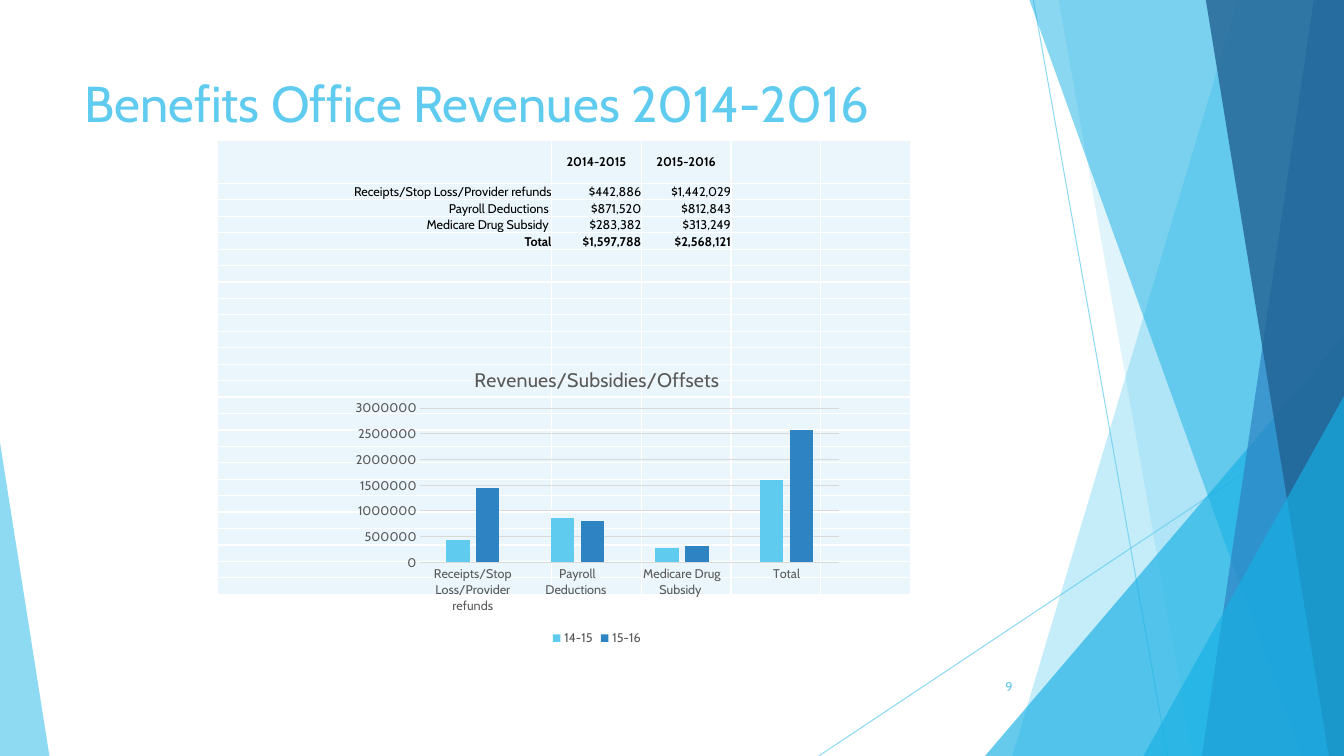
from lxml.etree import SubElement
from pptx import Presentation
from pptx.chart.data import CategoryChartData
from pptx.dml.color import RGBColor
from pptx.enum.chart import XL_CHART_TYPE, XL_LEGEND_POSITION, XL_TICK_MARK
from pptx.enum.shapes import MSO_CONNECTOR, MSO_SHAPE
from pptx.enum.text import MSO_ANCHOR, PP_ALIGN
from pptx.oxml.ns import qn
from pptx.util import Inches, Pt

FONT = "Cabin"
SKY = RGBColor(0x5F, 0xCB, 0xEF)
CYAN = RGBColor(0x17, 0xB0, 0xE4)
BLUE = RGBColor(0x2E, 0x83, 0xC3)
NAVY = RGBColor(0x22, 0x62, 0x92)
PALE = RGBColor(0xEA, 0xF6, 0xFC)
GRAY = RGBColor(0x59, 0x59, 0x59)
RULE = RGBColor(0xD9, 0xD9, 0xD9)
BLACK = RGBColor(0, 0, 0)

WIDE, HIGH = 13.33, 7.5
WEDGES = [
    ([(12.28, 0), (WIDE, 0), (WIDE, HIGH), (10.04, HIGH)], SKY, 36),
    ([(10.5, 0), (WIDE, 0), (WIDE, HIGH), (11.83, HIGH)], SKY, 20),
    ((9.77, 3.33, 3.56, 4.17, 1), CYAN, 66),
    ([(10.21, 0), (WIDE, 0), (WIDE, HIGH), (12.91, HIGH)], CYAN, 50),
    ([(13.03, 0), (WIDE, 0), (WIDE, HIGH), (11.92, HIGH)], BLUE, 70),
    ([(11.96, 0), (WIDE, 0), (WIDE, HIGH), (13.18, HIGH)], NAVY, 80),
    ((11.34, 3.93, 1.99, 3.57, 1), CYAN, 66),
    ((0, 4.39, 0.49, 3.11, 0), SKY, 70),
]
NAMES = ["Receipts/Stop Loss/Provider refunds", "Payroll Deductions ",
         "Medicare Drug Subsidy ", "Total"]
SUMS = [("$442,886", "$1,442,029"), ("$871,520", "$812,843"),
        ("$283,382", "$313,249"), ("$1,597,788", "$2,568,121")]
HEADS = ("", "2014-2015", "2015-2016")
SERIES = [("14-15", (440000, 870000, 280000, 1600000), SKY),
          ("15-16", (1440000, 810000, 310000, 2570000), BLUE)]
COLS = [3.31] + [0.89] * 4
ROWS = [0.43] + [(4.51 - 0.43) / 25] * 25


def style(font, size, color, bold=False):
    font.name, font.size, font.bold = FONT, Pt(size), bold
    font.color.rgb = color


def fade(fill, percent):
    color = fill._xPr.find(qn("a:solidFill"))[0]
    SubElement(color, qn("a:alpha"), val=str(percent * 1000))


def add_line(slide, start, end):
    line = slide.shapes.add_connector(
        MSO_CONNECTOR.STRAIGHT, *map(Inches, start + end))
    line.line.color.rgb = SKY
    line.line.width = Pt(0.75)
    fade(line.line.fill, 70)
    SubElement(line._element.spPr, qn("a:effectLst"))


def add_wedge(slide, form, color, percent):
    if isinstance(form, list):
        first, *rest = [tuple(map(Inches, point)) for point in form]
        pen = slide.shapes.build_freeform(*first)
        pen.add_line_segments(rest, close=True)
        wedge = pen.convert_to_shape()
    else:
        *box, peak = form
        wedge = slide.shapes.add_shape(
            MSO_SHAPE.ISOSCELES_TRIANGLE, *map(Inches, box))
        wedge.adjustments[0] = peak
    wedge.shadow.inherit = False
    wedge.fill.solid()
    wedge.fill.fore_color.rgb = color
    fade(wedge.fill, percent)
    wedge.line.fill.background()


def add_title(slide, text):
    title = slide.shapes.title
    title.left, title.top = Inches(0.74), Inches(0.67)
    title.width, title.height = Inches(9.4), Inches(1.44)
    title.text_frame.text = text
    title.text_frame.vertical_anchor = MSO_ANCHOR.TOP
    para = title.text_frame.paragraphs[0]
    para.alignment = PP_ALIGN.LEFT
    style(para.font, 36, SKY)


def add_number(slide, text):
    frame = slide.shapes.add_textbox(
        Inches(9.39), Inches(6.61), Inches(0.75), Inches(0.4)).text_frame
    frame.word_wrap = True
    frame.vertical_anchor = MSO_ANCHOR.MIDDLE
    para = frame.paragraphs[0]
    para.text = text
    para.alignment = PP_ALIGN.RIGHT
    style(para.font, 9, SKY)


def fill_cell(cell, text, head, bold):
    cell.margin_left = cell.margin_right = 0
    cell.margin_top = cell.margin_bottom = 0
    cell.vertical_anchor = MSO_ANCHOR.MIDDLE if head else MSO_ANCHOR.BOTTOM
    props = cell._tc.get_or_add_tcPr()
    for side in ("lnL", "lnR", "lnT", "lnB"):
        edge = SubElement(props, qn(f"a:{side}"), w=str(Pt(1)))
        paint = SubElement(edge, qn("a:solidFill"))
        SubElement(paint, qn("a:srgbClr"), val="FFFFFF")
    cell.fill.solid()
    cell.fill.fore_color.rgb = PALE
    para = cell.text_frame.paragraphs[0]
    para.alignment = PP_ALIGN.CENTER if head else PP_ALIGN.RIGHT
    style(para.font, 9, BLACK, bold)
    if text:
        para.text = text
    else:
        SubElement(para._p, qn("a:endParaRPr"), sz="900")


def add_grid(slide):
    table = slide.shapes.add_table(
        len(ROWS), len(COLS), Inches(2.16), Inches(1.39),
        Inches(sum(COLS)), Inches(sum(ROWS))).table
    table.first_row = table.horz_banding = False
    for col, width in zip(table.columns, COLS):
        col.width = Inches(width)
    lines = [HEADS] + [(name, *pair) for name, pair in zip(NAMES, SUMS)]
    for r, height in enumerate(ROWS):
        table.rows[r].height = Inches(height)
        texts = lines[r] if r < len(lines) else ()
        for c in range(len(COLS)):
            text = texts[c] if c < len(texts) else ""
            fill_cell(table.cell(r, c), text, r == 0, r in (0, len(NAMES)))


def place(node, index, **sizes):
    for old in node.findall(qn("c:layout")):
        node.remove(old)
    layout = node.makeelement(qn("c:layout"))
    node.insert(index, layout)
    manual = SubElement(layout, qn("c:manualLayout"))
    if "w" in sizes:
        SubElement(manual, qn("c:layoutTarget"), val="inner")
    for mode in ("xMode", "yMode"):
        SubElement(manual, qn(f"c:{mode}"), val="edge")
    for key, value in sizes.items():
        SubElement(manual, qn(f"c:{key}"), val=str(value))


def add_bars(slide):
    data = CategoryChartData()
    data.categories = NAMES
    for name, values, _ in SERIES:
        data.add_series(name, values)
    chart = slide.shapes.add_chart(
        XL_CHART_TYPE.COLUMN_CLUSTERED, Inches(3.42), Inches(3.45),
        Inches(5), Inches(3), data).chart
    style(chart.font, 10, BLACK)
    chart.has_title = True
    frame = chart.chart_title.text_frame
    frame.text = "Revenues/Subsidies/Offsets"
    style(frame.paragraphs[0].font, 14, GRAY)
    place(chart.chart_title._element, 1, x=0.25, y=0.05)
    place(chart._chartSpace.chart.plotArea, 0, x=0.15, y=0.2, w=0.83, h=0.51)
    chart.has_legend = True
    chart.legend.position = XL_LEGEND_POSITION.BOTTOM
    chart.legend.include_in_layout = False
    style(chart.legend.font, 9, GRAY)
    plot = chart.plots[0]
    plot.gap_width, plot.overlap, plot.vary_by_categories = 219, -27, False
    for bars, (_, _, color) in zip(plot.series, SERIES):
        bars.format.fill.solid()
        bars.format.fill.fore_color.rgb = color
    cats, vals = chart.category_axis, chart.value_axis
    for axis in (cats, vals):
        axis.major_tick_mark = axis.minor_tick_mark = XL_TICK_MARK.NONE
        style(axis.tick_labels.font, 9, GRAY)
    vals.minimum_scale, vals.maximum_scale = 0, 3000000
    vals.major_unit = 500000
    vals.format.line.fill.background()
    for line in (cats.format.line, vals.major_gridlines.format.line):
        line.color.rgb = RULE
        line.width = Pt(0.75)


def main():
    """Build the benefits revenue slide and save it."""
    deck = Presentation()
    deck.slide_width, deck.slide_height = Inches(WIDE), Inches(HIGH)
    slide = deck.slides.add_slide(deck.slide_layouts[5])
    add_line(slide, (10.25, 0), (11.58, HIGH))
    add_line(slide, (WIDE, 4.03), (8.12, HIGH))
    for wedge in WEDGES:
        add_wedge(slide, *wedge)
    add_title(slide, "Benefits Office Revenues 2014-2016")
    add_grid(slide)
    add_bars(slide)
    add_number(slide, "9")
    deck.save("out.pptx")


if __name__ == "__main__":
    main()
